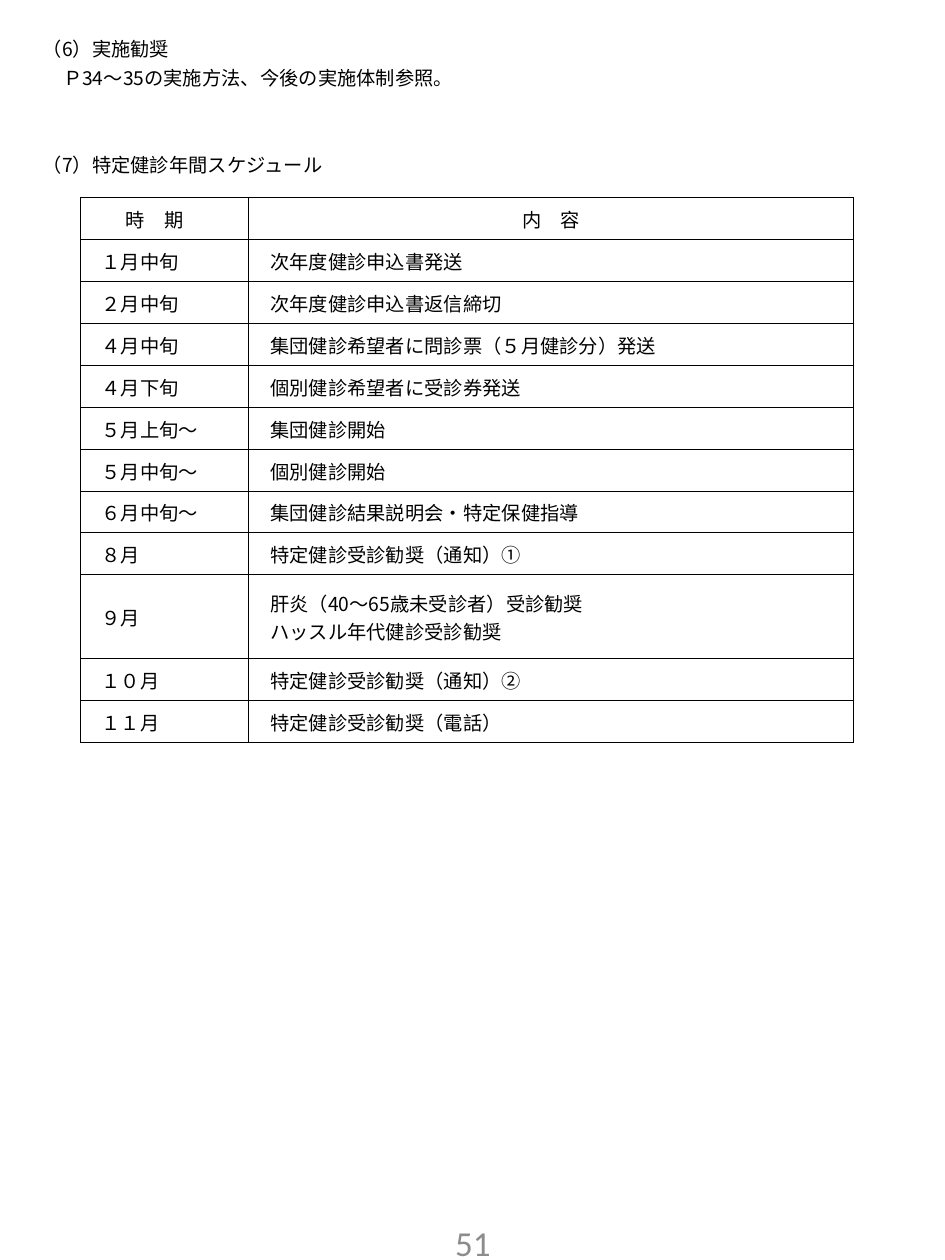
from dataclasses import dataclass

from lxml import etree
from pptx import Presentation
from pptx.dml.color import RGBColor
from pptx.enum.text import MSO_ANCHOR, MSO_AUTO_SIZE, PP_ALIGN
from pptx.oxml.ns import qn
from pptx.util import Inches, Pt

MID = MSO_ANCHOR.MIDDLE
TOP = MSO_ANCHOR.TOP
FIXED = MSO_AUTO_SIZE.NONE
LEFT = PP_ALIGN.LEFT
CENTER = PP_ALIGN.CENTER

WIDE, HIGH = Inches(7.5), Inches(10)
HEX = {"ink": "000000", "page": "8C8C8C"}
SANS, LATIN = "Noto Sans CJK JP", "Calibri"
INDENT = Inches(0.16)
EDGE = Inches(0.01)
PITCH = 16.6


@dataclass
class Box:
    x: float
    y: float
    w: float
    h: float

    def place(self) -> tuple[int, int, int, int]:
        return (int(self.x * WIDE), int(self.y * HIGH),
                int(self.w * WIDE), int(self.h * HIGH))


@dataclass
class Line:
    text: str
    gap: int = 0
    inset: int = 0


@dataclass
class Row:
    time: str
    task: str
    units: int = 1


NOTES = Box(0.032, 0.02, 0.925, 0.223)
GRID = Box(0.085, 0.157, 0.818, 0.432)
PAGE = Box(0.388, 0.96, 0.225, 0.053)
SHARES = (0.218, 0.782)

LINES = [
    Line("（6）実施勧奨"),
    Line("Ｐ34～35の実施方法、今後の実施体制参照。", inset=INDENT),
    Line("（7）特定健診年間スケジュール", gap=2),
]

ROWS = [
    Row("時　期", "内　容"),
    Row("１月中旬", "次年度健診申込書発送"),
    Row("２月中旬", "次年度健診申込書返信締切"),
    Row("４月中旬", "集団健診希望者に問診票（５月健診分）発送"),
    Row("４月下旬", "個別健診希望者に受診券発送"),
    Row("５月上旬～", "集団健診開始"),
    Row("５月中旬～", "個別健診開始"),
    Row("６月中旬～", "集団健診結果説明会・特定保健指導"),
    Row("８月", "特定健診受診勧奨（通知）①"),
    Row("９月", "肝炎（40～65歳未受診者）受診勧奨\vハッスル年代健診受診勧奨", 2),
    Row("１０月", "特定健診受診勧奨（通知）②"),
    Row("１１月", "特定健診受診勧奨（電話）"),
]


def style(para, size: float, face: str, ink: str, align=LEFT) -> None:
    para.alignment = align
    font = para.font
    font.size = Pt(size)
    font.color.rgb = RGBColor.from_string(HEX[ink])
    font.name = face
    latin = para._p.pPr.find(qn("a:defRPr")).find(qn("a:latin"))
    east = etree.Element(qn("a:ea"), typeface=face)
    latin.addnext(east)


def border(cell) -> None:
    props = cell._tc.get_or_add_tcPr()
    for spot, side in enumerate(("lnL", "lnR", "lnT", "lnB")):
        line = etree.Element(qn(f"a:{side}"), w=str(Pt(0.5)))
        fill = etree.SubElement(line, qn("a:solidFill"))
        etree.SubElement(fill, qn("a:srgbClr"), val=HEX["ink"])
        props.insert(spot, line)


def notes(slide) -> None:
    body = slide.placeholders[1]
    body.left, body.top, body.width, body.height = NOTES.place()
    frame = body.text_frame
    frame.auto_size = FIXED
    frame.vertical_anchor = TOP
    frame.text = "\n".join(line.text for line in LINES)
    for para, line in zip(frame.paragraphs, LINES):
        style(para, 11, SANS, "ink")
        para.line_spacing = Pt(PITCH)
        para.space_before = Pt(PITCH * line.gap)
        props = para._p.pPr
        props.set("marL", str(line.inset))
        props.set("indent", "0")
        props.find(qn("a:defRPr")).addprevious(etree.Element(qn("a:buNone")))


def schedule(slide) -> None:
    x, y, w, h = GRID.place()
    table = slide.shapes.add_table(len(ROWS), len(SHARES), x, y, w, h).table
    table.first_row = table.horz_banding = False
    for col, share in zip(table.columns, SHARES):
        col.width = int(w * share)
    unit = h / sum(row.units for row in ROWS)
    for r, row in enumerate(ROWS):
        table.rows[r].height = int(unit * row.units)
        for c, text in enumerate((row.time, row.task)):
            cell = table.cell(r, c)
            cell.fill.background()
            border(cell)
            cell.vertical_anchor = MID
            cell.margin_left = EDGE + (INDENT if r else 0)
            cell.margin_right = EDGE + (INDENT if r + c == 0 else 0)
            cell.margin_top, cell.margin_bottom = EDGE, 0
            para = cell.text_frame.paragraphs[0]
            para.text = text
            style(para, 11, SANS, "ink", LEFT if r else CENTER)


def number(slide, text: str) -> None:
    frame = slide.shapes.add_textbox(*PAGE.place()).text_frame
    frame.word_wrap = True
    frame.vertical_anchor = MID
    para = frame.paragraphs[0]
    para.text = text
    style(para, 20, LATIN, "page", CENTER)


def main() -> None:
    deck = Presentation()
    deck.slide_width, deck.slide_height = WIDE, HIGH
    slide = deck.slides.add_slide(deck.slide_layouts[1])
    title = slide.shapes.title._element
    title.getparent().remove(title)
    number(slide, "51")
    notes(slide)
    schedule(slide)
    deck.save("out.pptx")


if __name__ == "__main__":
    main()
